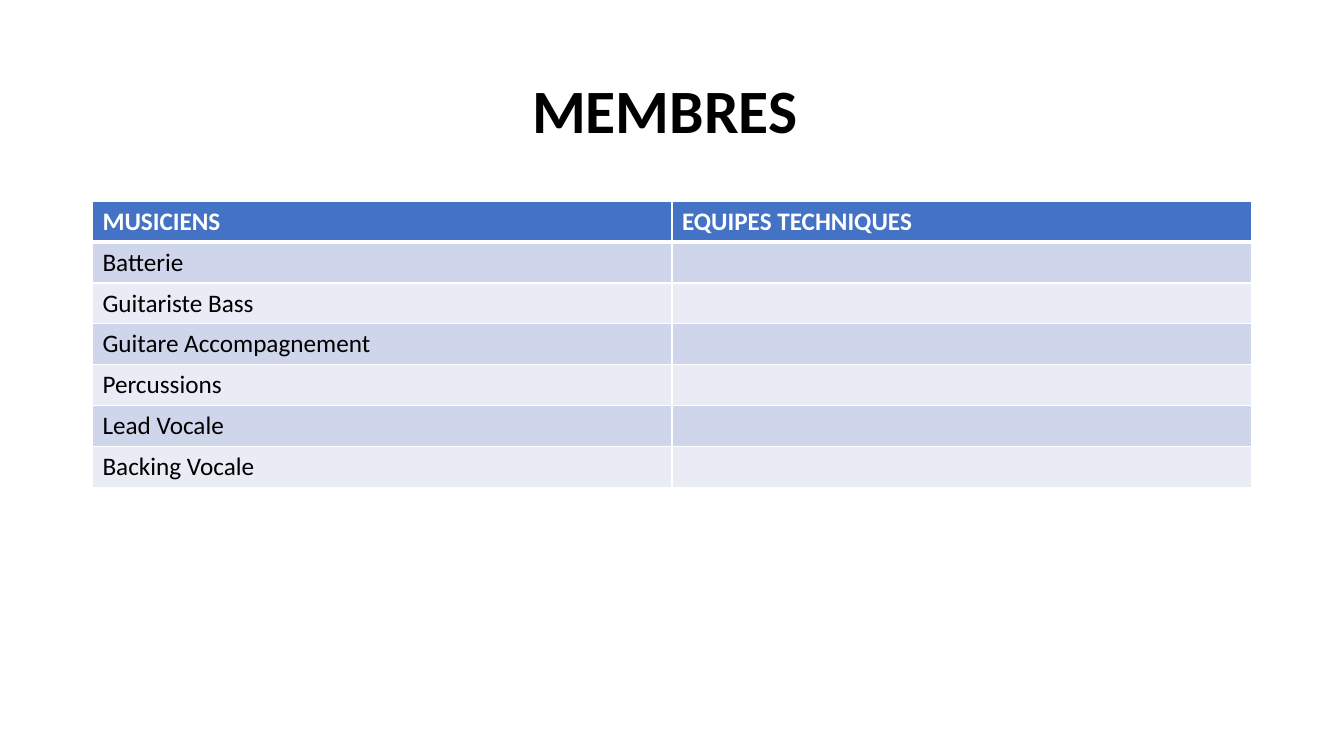
"""Build the MEMBRES slide: a centred title above a two-column table of roles."""
from dataclasses import dataclass

import lxml.etree
import pptx
import pptx.dml.color
import pptx.enum.text
import pptx.oxml.ns
import pptx.table
import pptx.text.text
import pptx.util

COLORS = {
    "title": "000000",
    "header": "4472C4",
    "header_text": "FFFFFF",
    "band_dark": "CFD5EA",
    "band_light": "E9EBF5",
    "body_text": "000000",
    "border": "FFFFFF",
}
FONT = "Calibri"
LEFT, WIDTH = 2.33, 29.21
ROW_HEIGHT = 1.03


@dataclass(frozen=True)
class RowStyle:
    fill: str
    text: str
    bold: bool
    bottom_pt: int


HEADER = RowStyle("header", "header_text", True, 3)
BANDS = (
    RowStyle("band_dark", "body_text", False, 1),
    RowStyle("band_light", "body_text", False, 1),
)
ROWS = (
    ("MUSICIENS", "EQUIPES TECHNIQUES"),
    ("Batterie", ""),
    ("Guitariste Bass", ""),
    ("Guitare Accompagnement", ""),
    ("Percussions", ""),
    ("Lead Vocale", ""),
    ("Backing Vocale", ""),
)


def rgb(name: str) -> pptx.dml.color.RGBColor:
    return pptx.dml.color.RGBColor.from_string(COLORS[name])


def format_font(font: pptx.text.text.Font, size: int, color: str, bold: bool) -> None:
    font.name = FONT
    font.size = pptx.util.Pt(size)
    font.bold = bold
    font.color.rgb = rgb(color)


def add_border(cell: pptx.table._Cell, side: str, width_pt: int) -> None:
    qn = pptx.oxml.ns.qn
    tc_pr = cell._tc.get_or_add_tcPr()
    ln = lxml.etree.SubElement(tc_pr, qn(f"a:ln{side}"), w=str(pptx.util.Pt(width_pt)))
    fill = lxml.etree.SubElement(ln, qn("a:solidFill"))
    lxml.etree.SubElement(fill, qn("a:srgbClr"), val=COLORS["border"])


def fill_cell(cell: pptx.table._Cell, text: str, style: RowStyle, top_pt: int) -> None:
    for side, width_pt in (("L", 1), ("R", 1), ("T", top_pt), ("B", style.bottom_pt)):
        add_border(cell, side, width_pt)
    cell.fill.solid()
    cell.fill.fore_color.rgb = rgb(style.fill)
    cell.text_frame.text = text
    p = cell.text_frame.paragraphs[0]
    for r in p.runs:
        format_font(r.font, 18, style.text, style.bold)


def add_title(s: pptx.slide.Slide, text: str) -> None:
    Cm = pptx.util.Cm
    sp = s.shapes.add_textbox(Cm(LEFT), Cm(1.01), Cm(WIDTH), Cm(3.68))
    tf = sp.text_frame
    tf.word_wrap = True
    tf.vertical_anchor = pptx.enum.text.MSO_ANCHOR.MIDDLE
    tf.text = text
    p = tf.paragraphs[0]
    p.alignment = pptx.enum.text.PP_ALIGN.CENTER
    p.line_spacing = 0.9
    format_font(p.runs[0].font, 44, "title", True)


def add_members_table(s: pptx.slide.Slide) -> None:
    Cm = pptx.util.Cm
    frame = s.shapes.add_table(
        len(ROWS), len(ROWS[0]), Cm(LEFT), Cm(5.07), Cm(WIDTH), Cm(ROW_HEIGHT * len(ROWS))
    )
    table = frame.table
    top_pt = 1
    for i, texts in enumerate(ROWS):
        style = BANDS[(i - 1) % 2] if i else HEADER
        table.rows[i].height = Cm(ROW_HEIGHT)
        for j, text in enumerate(texts):
            fill_cell(table.cell(i, j), text, style, top_pt)
        top_pt = style.bottom_pt


def main() -> None:
    prs = pptx.Presentation()
    prs.slide_width = pptx.util.Cm(33.87)
    prs.slide_height = pptx.util.Cm(19.05)
    s = prs.slides.add_slide(prs.slide_layouts[6])
    add_title(s, "MEMBRES ")
    add_members_table(s)
    prs.save("out.pptx")


if __name__ == "__main__":
    main()
